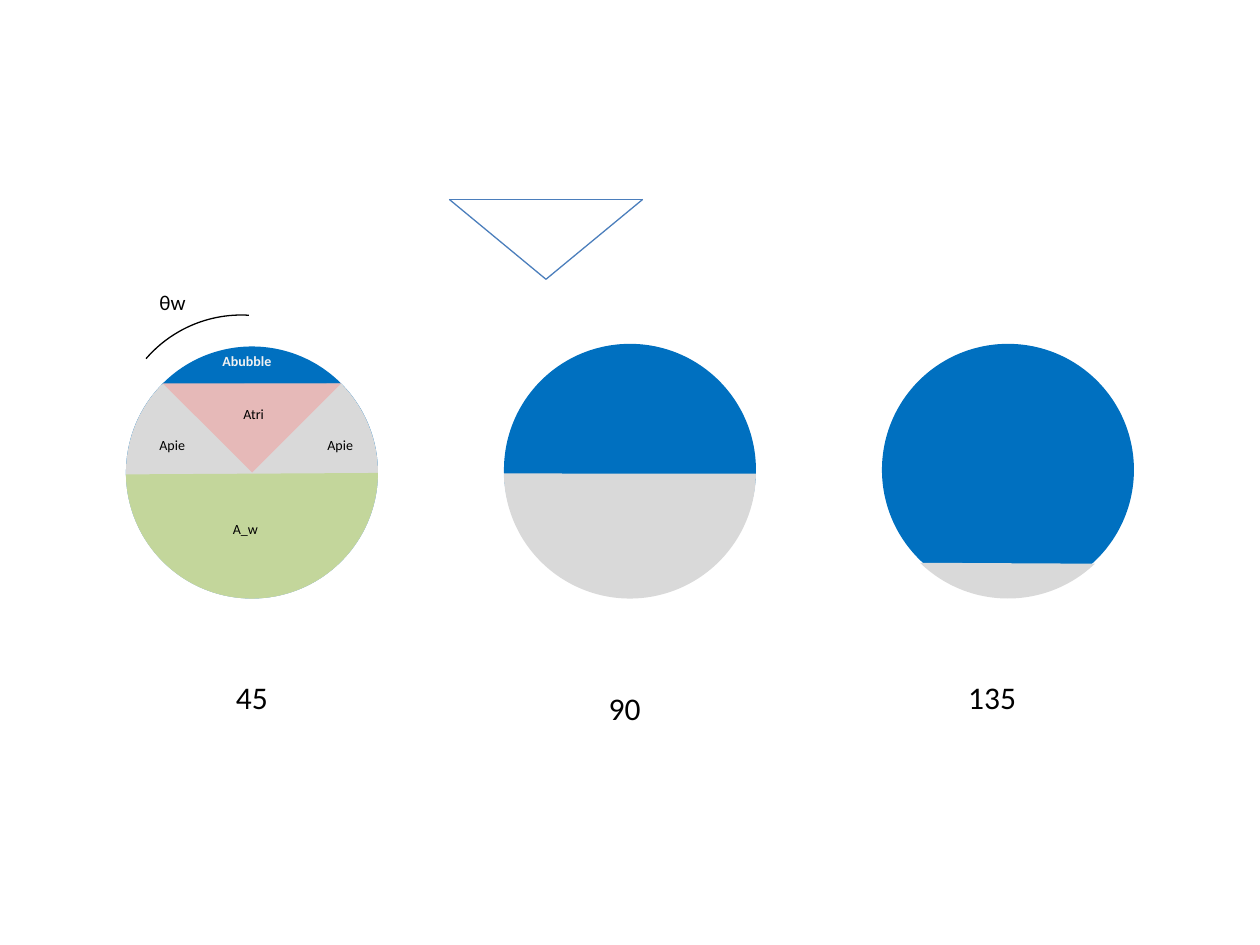
from dataclasses import dataclass
from itertools import combinations

from lxml.etree import SubElement
from pptx import Presentation
from pptx.dml.color import RGBColor
from pptx.enum.shapes import MSO_CONNECTOR as CONN, MSO_SHAPE as SHAPE
from pptx.enum.text import MSO_AUTO_SIZE as FIT, PP_ALIGN as ALIGN
from pptx.oxml.ns import qn
from pptx.util import Inches, Pt

COLS, ROWS = 120, 90
CELL = Inches(10) // COLS
DIAMETER = 24
DEGREE = 0.6
BLUE, GREY, GREEN, PINK = "0070C0", "D9D9D9", "C3D69B", "E6B9B8"
BLACK, WHITE, EDGE = "000000", "F2F2F2", "4B7EBC"


@dataclass
class Bubble:
    """A disc partly filled from below, with the chord's end angles."""
    col: float
    row: float
    start: float
    end: float


@dataclass
class Label:
    """A text box placed on the grid."""
    text: str
    col: float
    row: float
    width: float
    height: float = 2.9
    size: int = 8
    color: str = BLACK
    bold: bool = False
    align: ALIGN = ALIGN.LEFT


BUBBLES = [
    Bubble(48, 32.75, 90.53, 269.58),
    Bubble(84, 32.75, 136.35, 224.25),
    Bubble(12, 33, 45.17, 314.49),
]
ANGLES = [
    Label(text, col, row, 11, 5, 18, align=ALIGN.CENTER)
    for text, col, row in [("45", 18.5, 64), ("90", 54, 65), ("135", 89, 64)]
]
AREAS = [
    Label("Apie", 30, 41, 5),
    Label("Apie", 14, 41, 5),
    Label("Atri", 22, 38, 5),
    Label("Abubble", 20, 33, 8, color=WHITE, bold=True),
    Label("θw", 14, 27, 8, 3.6, 12),
    Label("A_w", 21, 49, 5),
]
TRIANGLE = [(52, 26.6), (42.8, 19), (61.2, 19)]


def grid(*cells: float) -> list[int]:
    """Turn grid cells into slide lengths."""
    return [round(c * CELL) for c in cells]


def rgb(color: str) -> RGBColor:
    """Turn a hex string into a colour."""
    return RGBColor.from_string(color)


def add_shape(s, kind: SHAPE, box: tuple, fill: str = "", line: str = "",
              rotation: float = 0, angles: tuple = ()):
    """Draw a preset shape, with optional end angles in degrees."""
    sp = s.shapes.add_shape(kind, *grid(*box))
    sp.shadow.inherit = False
    sp.rotation = rotation
    for i, angle in enumerate(angles):
        sp.adjustments[i] = angle * DEGREE
    if fill:
        sp.fill.solid()
        sp.fill.fore_color.rgb = rgb(fill)
    else:
        sp.fill.background()
    if line:
        sp.line.color.rgb = rgb(line)
        sp.line.width = Pt(0.75)
    else:
        sp.line.fill.background()
    return sp


def add_chord(s, col: float, fill: str, start: float, end: float) -> None:
    """Draw the lower segment of a disc."""
    add_shape(s, SHAPE.CHORD, (col, 33, DIAMETER, DIAMETER), fill,
              rotation=270, angles=(start, end))


def add_bubble(s, b: Bubble) -> None:
    """Draw a disc and the segment over it."""
    add_shape(s, SHAPE.OVAL, (b.col, b.row, DIAMETER, DIAMETER), BLUE)
    add_chord(s, b.col, GREY, b.start, b.end)


def add_label(s, label: Label) -> None:
    """Write a label in a text box."""
    sp = s.shapes.add_textbox(*grid(label.col, label.row, label.width, label.height))
    tf = sp.text_frame
    tf.word_wrap = True
    tf.auto_size = FIT.SHAPE_TO_FIT_TEXT
    p = tf.paragraphs[0]
    p.alignment = label.align
    r = p.add_run()
    r.text = label.text
    fmt = {"name": "Calibri", "size": Pt(label.size), "bold": label.bold}
    for key, value in fmt.items():
        setattr(r.font, key, value)
    r.font.color.rgb = rgb(label.color)


def add_outline(s, corners: list[tuple]) -> None:
    """Join every pair of corners with a line, in one group."""
    group = s.shapes.add_group_shape()
    for start, end in combinations(corners, 2):
        line = group.shapes.add_connector(CONN.STRAIGHT, *grid(*start, *end))
        line.line.color.rgb = rgb(EDGE)
        line.line.width = Pt(0.75)
        SubElement(line._element.spPr, qn("a:effectLst"))


def main() -> None:
    """Build the slide and save it."""
    prs = Presentation()
    prs.slide_width, prs.slide_height = COLS * CELL, ROWS * CELL
    s = prs.slides.add_slide(prs.slide_layouts[6])
    for bubble in BUBBLES:
        add_bubble(s, bubble)
    for label in ANGLES:
        add_label(s, label)
    add_outline(s, TRIANGLE)
    add_shape(s, SHAPE.ISOSCELES_TRIANGLE, (15.5, 36.5, 17, 8.5), PINK, rotation=180)
    add_chord(s, 12, GREEN, 90.19, 269.16)
    for label in AREAS:
        add_label(s, label)
    add_shape(s, SHAPE.ARC, (11, 30, DIAMETER, DIAMETER), line=BLACK,
              rotation=270, angles=(310.79, 3.41))
    prs.save("out.pptx")


if __name__ == "__main__":
    main()
